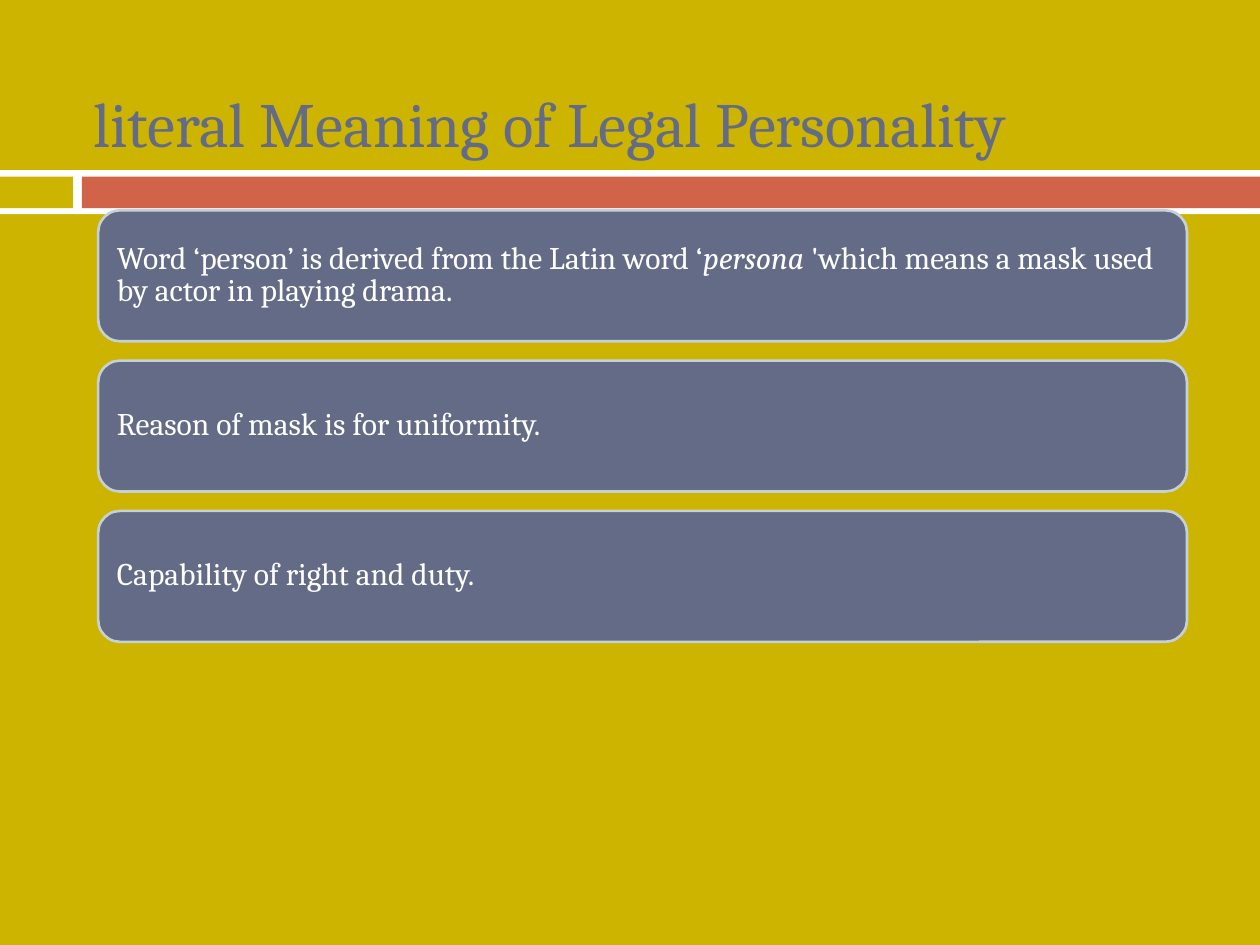
import pptx
import pptx.dml.color
import pptx.enum.shapes
import pptx.enum.text
import pptx.util

Cm = pptx.util.Cm
Pt = pptx.util.Pt
SHAPE = pptx.enum.shapes.MSO_SHAPE

GOLD = "CCB400"
WHITE = "FFFFFF"
RED = "D16349"
SLATE = "646B86"
PALE_BLUE = "C5D1D7"

SLIDE_WIDTH, SLIDE_HEIGHT = 25.4, 19.05


def color(hex_string):
    return pptx.dml.color.RGBColor.from_string(hex_string)


class SlideBuilder:
    """Holds the text style and the slide being built; lengths are in cm."""

    font_name = "Cambria"

    def __init__(self, slide, background):
        self.slide = slide
        fill = slide.background.fill
        fill.solid()
        fill.fore_color.rgb = color(background)

    def add_text(self, frame, runs, size, text_color, line_spacing=None):
        """Fill a frame with one paragraph of (text, italic) runs."""
        frame.word_wrap = True
        frame.vertical_anchor = pptx.enum.text.MSO_ANCHOR.MIDDLE
        paragraph = frame.paragraphs[0]
        paragraph.alignment = pptx.enum.text.PP_ALIGN.LEFT
        paragraph.line_spacing = line_spacing
        for text, italic in runs:
            run = paragraph.add_run()
            run.text = text
            run.font.name = self.font_name
            run.font.size = Pt(size)
            run.font.italic = italic
            run.font.color.rgb = color(text_color)

    def panel(self, kind, left, top, width, height, fill):
        """Add a filled shape without outline or shadow."""
        panel = self.slide.shapes.add_shape(
            kind, Cm(left), Cm(top), Cm(width), Cm(height))
        panel.shadow.inherit = False
        panel.fill.solid()
        panel.fill.fore_color.rgb = color(fill)
        panel.line.fill.background()
        return panel

    def band(self, left, top, width, height, fill):
        self.panel(SHAPE.RECTANGLE, left, top, width, height, fill)

    def title(self, text, left, top, width, height):
        heading = self.slide.shapes.add_textbox(
            Cm(left), Cm(top), Cm(width), Cm(height))
        self.add_text(heading.text_frame, [(text, False)], 36, SLATE)

    def card(self, runs, left, top, width, height):
        card = self.panel(
            SHAPE.ROUNDED_RECTANGLE, left, top, width, height, SLATE)
        card.line.color.rgb = color(PALE_BLUE)
        card.line.width = Pt(1.5)
        self.add_text(card.text_frame, runs, 18, WHITE, line_spacing=0.85)


def main():
    deck = pptx.Presentation()
    deck.slide_width, deck.slide_height = Cm(SLIDE_WIDTH), Cm(SLIDE_HEIGHT)
    builder = SlideBuilder(deck.slides.add_slide(deck.slide_layouts[6]), GOLD)

    builder.band(0, 3.43, SLIDE_WIDTH, 0.89, WHITE)
    builder.band(0, 3.56, 1.47, 0.64, GOLD)
    builder.band(1.65, 3.56, SLIDE_WIDTH - 1.65, 0.64, RED)
    builder.title("literal Meaning of Legal Personality", 1.63, 1.09, 22.66, 2.74)

    points = [
        [("Word ‘person’ is derived from the Latin word ‘", False),
         ("persona", True),
         (" 'which means a mask used by actor in playing drama.", False)],
        [("Reason of mask is for uniformity.", False)],
        [("Capability of right and duty.", False)],
    ]
    first_top, pitch = 4.24, 3.03
    for row, runs in enumerate(points):
        builder.card(runs, 1.98, first_top + row * pitch, 21.95, 2.64)

    deck.save("out.pptx")


if __name__ == "__main__":
    main()
